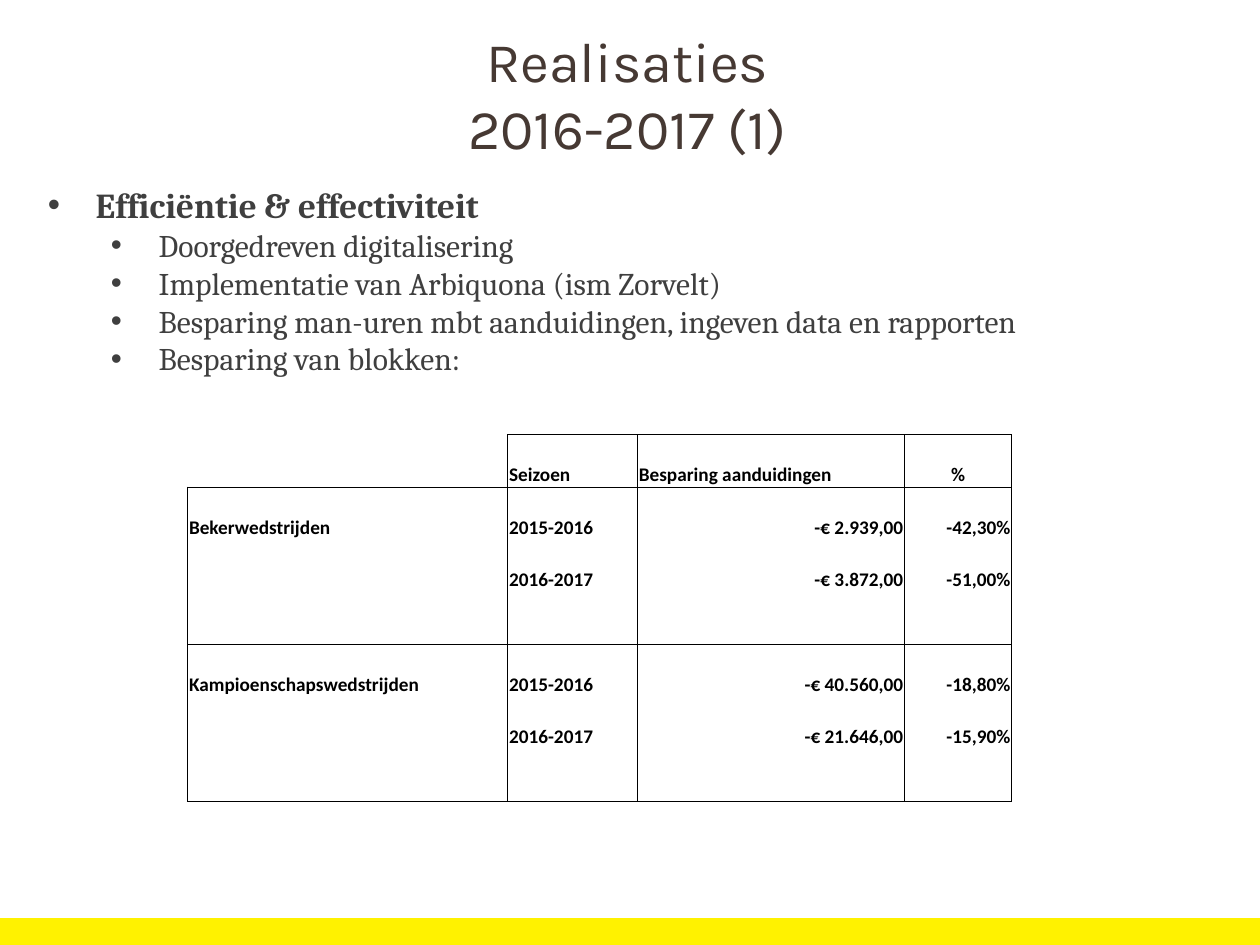
import pptx
import pptx.util
import pptx.dml.color
import pptx.enum.shapes
import pptx.enum.text
import pptx.oxml
import pptx.oxml.ns
from pptx.util import Inches

COLORS = {"bar": "FFF200", "title": "463933", "body": "3F3F3F", "table": "000000"}
ALIGN = pptx.enum.text.PP_ALIGN
ANCHOR = pptx.enum.text.MSO_ANCHOR
NS = pptx.oxml.ns.nsdecls("a")


def rgb(name):
    return pptx.dml.color.RGBColor.from_string(COLORS[name])


def write(p, text, *, font, size, color, bold=False, align=ALIGN.LEFT):
    p.alignment = align
    p.space_before = p.space_after = pptx.util.Pt(0)
    r = p.add_run()
    r.text = text
    r.font.name = font
    r.font.size = pptx.util.Pt(size)
    r.font.bold = bold
    r.font.color.rgb = rgb(color)


class SlideBuilder:
    heading = dict(font="Karla", size=32, color="title", align=ALIGN.CENTER)
    body = dict(font="Cambria", color="body")
    cell = dict(font="Calibri", size=11, color="table", bold=True)

    def __init__(self, prs):
        self.s = prs.slides.add_slide(prs.slide_layouts[1])

    def place(self, sp, left, top, width, height):
        sp.left, sp.top = Inches(left), Inches(top)
        sp.width, sp.height = Inches(width), Inches(height)
        tf = sp.text_frame
        tf.word_wrap = True
        tf.auto_size = pptx.enum.text.MSO_AUTO_SIZE.NONE
        tf.vertical_anchor = ANCHOR.TOP
        return tf

    def bar(self, left, top, width, height):
        sp = self.s.shapes.add_shape(
            pptx.enum.shapes.MSO_SHAPE.RECTANGLE,
            Inches(left), Inches(top), Inches(width), Inches(height))
        sp.shadow.inherit = False
        sp.fill.solid()
        sp.fill.fore_color.rgb = rgb("bar")
        sp.line.color.rgb = rgb("bar")
        sp.line.width = pptx.util.Pt(2.25)

    def title(self, text, *box):
        tf = self.place(self.s.shapes.title, *box)
        write(tf.paragraphs[0], text, **self.heading)

    def bullets(self, items, *box):
        tf = self.place(self.s.placeholders[1], *box)
        for i, (level, text) in enumerate(items):
            p = tf.add_paragraph() if i else tf.paragraphs[0]
            p.level = level
            pPr = p._p.get_or_add_pPr()
            pPr.set("marL", str(Inches(0.38 + 0.5 * level)))
            pPr.set("indent", str(Inches(-0.38)))
            for xml in ('<a:buFont %s typeface="Arial"/>', '<a:buChar %s char="•"/>'):
                pPr.append(pptx.oxml.parse_xml(xml % NS))
            write(p, text, size=18 if level else 20, bold=not level, **self.body)

    def borders(self, cell, sides):
        tcPr = cell._tc.get_or_add_tcPr()
        for i, side in enumerate("LRTB"):
            fill = '<a:noFill/>'
            if side in sides:
                fill = '<a:solidFill><a:srgbClr val="%s"/></a:solidFill>' % COLORS["table"]
            tcPr.insert(i, pptx.oxml.parse_xml(
                '<a:ln%s %s w="6350">%s</a:ln%s>' % (side, NS, fill, side)))

    def table(self, rows, widths, aligns, group_starts, left, top, height):
        tbl = self.s.shapes.add_table(
            len(rows), len(widths), Inches(left), Inches(top),
            Inches(sum(widths)), Inches(height)).table
        tbl.first_row = tbl.horz_banding = False
        for col, width in zip(tbl.columns, widths):
            col.width = Inches(width)
        for i, row in enumerate(rows):
            tbl.rows[i].height = Inches(height / len(rows))
            # Rules run around each group of rows, and the corner stays open
            sides = "LR"
            sides += "T" if i in group_starts else ""
            sides += "B" if i + 1 in group_starts + [len(rows)] else ""
            for j, text in enumerate(row):
                cell = tbl.cell(i, j)
                cell.fill.background()
                cell.vertical_anchor = ANCHOR.BOTTOM
                cell.margin_left = cell.margin_right = cell.margin_top = Inches(0.01)
                cell.margin_bottom = 0
                self.borders(cell, "RB" if i == j == 0 else sides)
                if text:
                    align = ALIGN.CENTER if text == "%" else aligns[j] if i else ALIGN.LEFT
                    write(cell.text_frame.paragraphs[0], text, align=align, **self.cell)


def main():
    prs = pptx.Presentation()
    prs.slide_width, prs.slide_height = Inches(10), Inches(7.5)
    slide = SlideBuilder(prs)

    # Footer bar
    slide.bar(0, 7.3, 10, 0.2)

    # Title and bullet list
    slide.title("Realisaties 2016-2017 (1)", 3.29, 0.16, 3.38, 1.17)
    slide.bullets([
        (0, "Efficiëntie & effectiviteit"),
        (1, "Doorgedreven digitalisering"),
        (1, "Implementatie van Arbiquona (ism Zorvelt)"),
        (1, "Besparing man-uren mbt aanduidingen, ingeven data en rapporten"),
        (1, "Besparing van blokken:"),
    ], 0.28, 1.41, 9.53, 2)

    # Savings per competition and season
    blank = [""] * 4
    slide.table([
        ["", "Seizoen", "Besparing aanduidingen", "%"],
        ["Bekerwedstrijden", "2015-2016", "-€ 2.939,00", "-42,30%"],
        ["", "2016-2017", "-€ 3.872,00", "-51,00%"],
        blank,
        ["Kampioenschapswedstrijden", "2015-2016", "-€ 40.560,00", "-18,80%"],
        ["", "2016-2017", "-€ 21.646,00", "-15,90%"],
        blank,
    ], [2.54, 1.03, 2.12, 0.85], [ALIGN.LEFT] * 2 + [ALIGN.RIGHT] * 2,
        [0, 1, 4], 1.49, 3.45, 2.91)

    prs.save("out.pptx")


if __name__ == "__main__":
    main()
